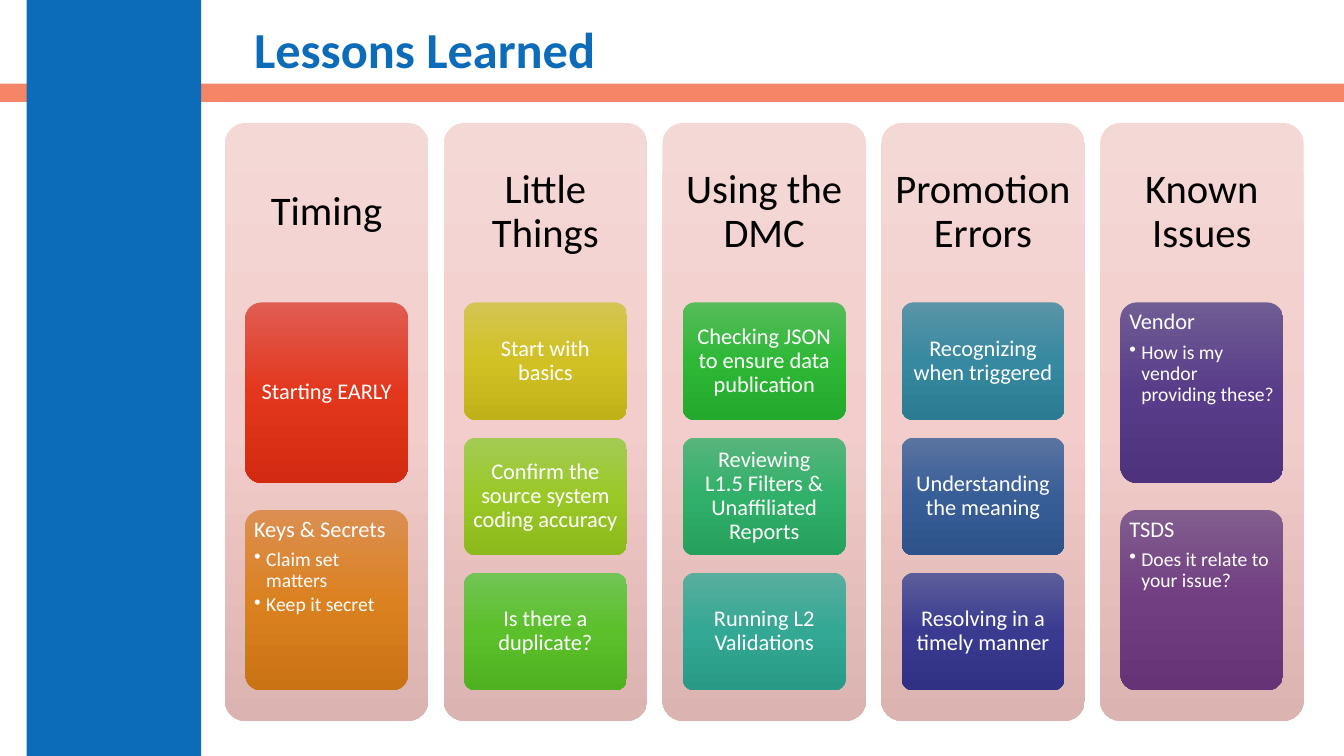
import copy

import lxml.etree
import pptx
import pptx.dml.color
import pptx.enum.shapes
import pptx.enum.text
import pptx.oxml.ns
import pptx.util

Kind = pptx.enum.shapes.MSO_SHAPE
Align = pptx.enum.text.PP_ALIGN
Anchor = pptx.enum.text.MSO_ANCHOR

PANEL = ("F4D8D6", "F3CDCB", "DBB3B1")

# Each column: heading, then tiles of (lines of text, bullets, gradient)
COLUMNS = [
    ("Timing", [
        (["Starting EARLY"], [], ("E05D52", "E3371D", "D22B11")),
        (["Keys & Secrets"], ["Claim set matters", "Keep it secret"],
         ("DB8F52", "DB8120", "CA7315")),
    ]),
    ("Little Things", [
        (["Start with basics"], [], ("D3C553", "D2C124", "C1B119")),
        (["Confirm the source system coding accuracy"], [],
         ("A3CB54", "9AC927", "8CB91C")),
        (["Is there a duplicate?"], [], ("72C455", "5BC02A", "4FB120")),
    ]),
    ("Using the DMC", [
        (["Checking JSON to ensure data publication"], [],
         ("56BC5B", "2EB836", "23A92B")),
        (["Reviewing", "L1.5 Filters & Unaffiliated Reports"], [],
         ("58B57C", "30B069", "26A15D")),
        (["Running L2 Validations"], [], ("59AE9E", "33A894", "299A86")),
    ]),
    ("Promotion Errors", [
        (["Recognizing when triggered"], [], ("5A94A7", "3689A0", "2B7C92")),
        (["Understanding the meaning"], [], ("5B73A1", "385E98", "2E538B")),
        (["Resolving in a timely manner"], [],
         ("5C5D9A", "3A3B90", "303184")),
    ]),
    ("Known Issues", [
        (["Vendor"], ["How is my vendor providing these?"],
         ("6F5D94", "593C89", "4E327D")),
        (["TSDS"], ["Does it relate to your issue?"],
         ("815E8E", "723E82", "663476")),
    ]),
]


def color(text):
    return pptx.dml.color.RGBColor.from_string(text)


def node(parent, tag, **attrs):
    return lxml.etree.SubElement(parent, pptx.oxml.ns.qn(tag), attrs)


class Board:
    """Style and current slide; boxes are (x, y, w, h) in percent of the slide."""

    font = "Calibri"
    blue, coral, black, white = "0D6CB9", "F16038", "000000", "FFFFFF"

    def __init__(self, deck):
        self.deck = deck
        self.slide = deck.slides.add_slide(deck.slide_layouts[5])

    def place(self, box):
        wide, high = self.deck.slide_width, self.deck.slide_height
        return [int(part * side / 100)
                for part, side in zip(box, (wide, high, wide, high))]

    def shape(self, kind, box):
        shape = self.slide.shapes.add_shape(kind, *self.place(box))
        shape.shadow.inherit = False
        shape.line.fill.background()
        return shape

    def band(self, box, fill, alpha=100):
        band = self.shape(Kind.RECTANGLE, box)
        band.fill.solid()
        band.fill.fore_color.rgb = color(fill)
        if alpha < 100:
            tone = band.element.spPr.find(".//" + pptx.oxml.ns.qn("a:srgbClr"))
            node(tone, "a:alpha", val=str(alpha * 1000))

    def card(self, box, tones):
        """Rounded box with a three-stop gradient from top to bottom."""
        card = self.shape(Kind.ROUNDED_RECTANGLE, box)
        card.adjustments[0] = 0.1
        card.fill.gradient()
        card.fill.gradient_angle = 270
        first = card.element.spPr.find(".//" + pptx.oxml.ns.qn("a:gs"))
        first.addnext(copy.deepcopy(first))
        stops = card.fill.gradient_stops
        for stop, spot, tone in zip(stops, (0, 0.5, 1), tones):
            stop.position = spot
            stop.color.rgb = color(tone)
        return card

    def frame(self, shape, anchor, side, edge):
        frame = shape.text_frame
        frame.word_wrap = True
        frame.auto_size = pptx.enum.text.MSO_AUTO_SIZE.NONE
        frame.vertical_anchor = anchor
        frame.margin_left = frame.margin_right = pptx.util.Inches(side)
        frame.margin_top = frame.margin_bottom = pptx.util.Inches(edge)
        return frame

    def text(self, para, lines, size, tone, align=Align.LEFT, bold=False):
        para.alignment = align
        para.line_spacing = 0.9
        para.space_before = pptx.util.Pt(0)
        for index, line in enumerate(lines):
            if index:
                para.add_line_break()
            run = para.add_run()
            run.text = line
            run.font.name = self.font
            run.font.size = pptx.util.Pt(size)
            run.font.bold = bold
            run.font.color.rgb = color(tone)

    def title(self, box, text):
        title = self.slide.shapes.title
        title.left, title.top, title.width, title.height = self.place(box)
        frame = self.frame(title, Anchor.MIDDLE, 0.1, 0.05)
        self.text(frame.paragraphs[0], [text], 36, self.blue, bold=True)

    def head(self, box, text):
        label = self.slide.shapes.add_textbox(*self.place(box))
        frame = self.frame(label, Anchor.MIDDLE, 0.12, 0.12)
        self.text(frame.paragraphs[0], [text], 29, self.black, Align.CENTER)

    def tile(self, box, lines, points, tones):
        anchor = Anchor.TOP if points else Anchor.MIDDLE
        align = Align.LEFT if points else Align.CENTER
        frame = self.frame(self.card(box, tones), anchor, 0.04, 0.03)
        lead = frame.paragraphs[0]
        self.text(lead, lines, 16, self.white, align)
        if points:
            lead.space_after = pptx.util.Pt(5.6)
        for point in points:
            para = frame.add_paragraph()
            para.level = 1
            props = para._p.get_or_add_pPr()
            dent = pptx.util.Inches(0.12)
            props.set("marL", str(dent))
            props.set("indent", str(-dent))
            node(props, "a:buChar", char="•")
            self.text(para, [point], 14, self.white)
            para.space_after = pptx.util.Pt(2.1)

    def column(self, left, text, tiles):
        self.card((left, 16.27, 15.15, 79.07), PANEL)
        self.head((left, 16.27, 15.15, 23.73), text)
        gap = 0.15  # share of a tile's height
        count = len(tiles)
        high = 51.33 / (count + gap * (count - 1))
        for row, tile in enumerate(tiles):
            top = 40 + row * high * (1 + gap)
            self.tile((left + 1.52, top, 12.11, high), *tile)


def main():
    deck = pptx.Presentation()
    deck.slide_width = pptx.util.Inches(13.33)
    deck.slide_height = pptx.util.Inches(7.5)
    board = Board(deck)
    board.band((0, 11.07, 100, 2.4), board.coral, 76)
    board.band((1.98, 0, 12.98, 100), board.blue)
    board.title((18.15, 2.93, 78.1, 7.87), "Lessons Learned")
    for index, (text, tiles) in enumerate(COLUMNS):
        board.column(16.73 + index * 16.28, text, tiles)
    deck.save("out.pptx")


if __name__ == "__main__":
    main()
